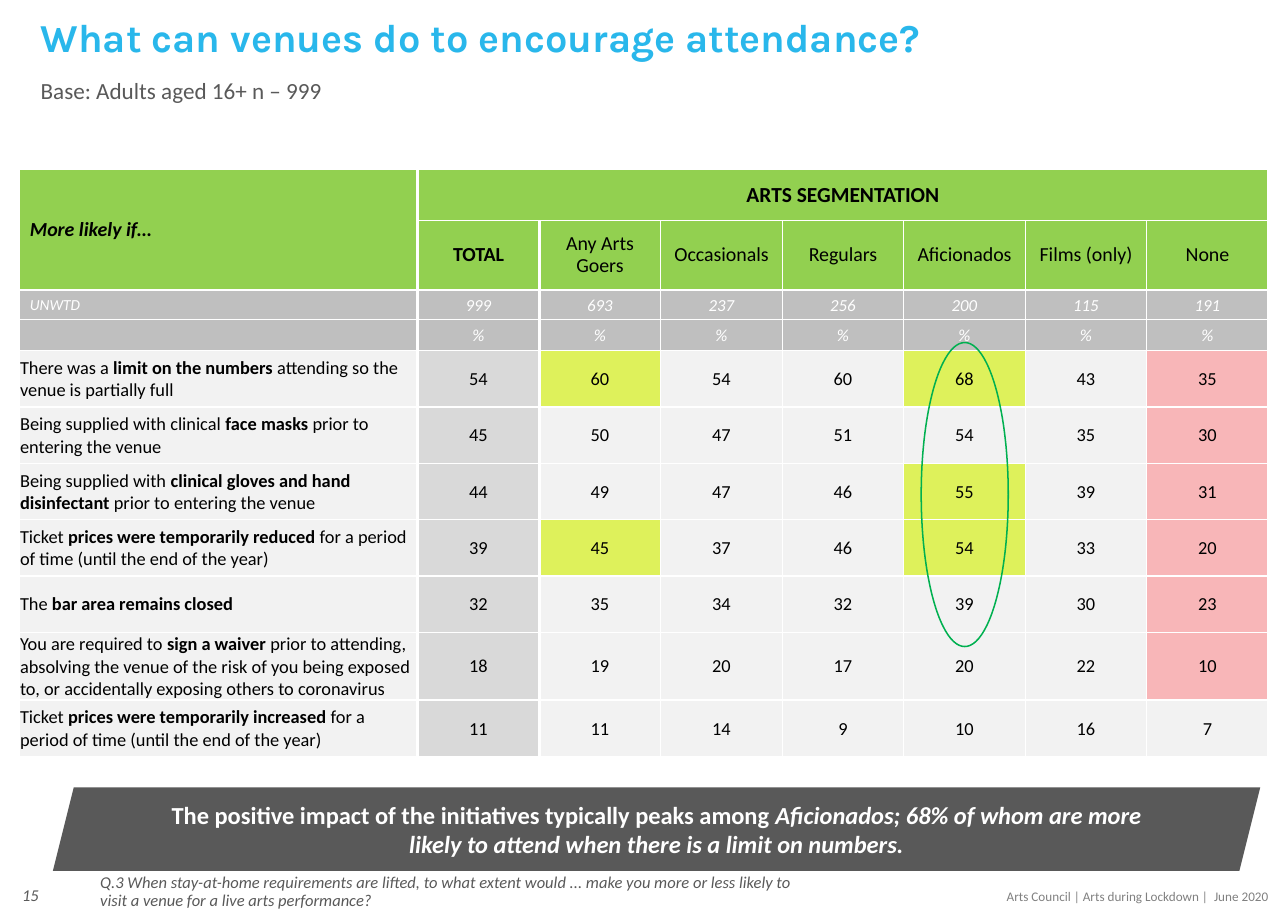
from dataclasses import dataclass

from lxml import etree
from pptx import Presentation
from pptx.dml.color import RGBColor
from pptx.enum.shapes import MSO_SHAPE
from pptx.enum.text import MSO_ANCHOR, MSO_AUTO_SIZE, PP_ALIGN
from pptx.oxml.ns import qn
from pptx.util import Pt

LEFT, CENTER, RIGHT = PP_ALIGN.LEFT, PP_ALIGN.CENTER, PP_ALIGN.RIGHT
TOP, MIDDLE = MSO_ANCHOR.TOP, MSO_ANCHOR.MIDDLE
ELLIPSE, PARALLELOGRAM = MSO_SHAPE.OVAL, MSO_SHAPE.PARALLELOGRAM


@dataclass(frozen=True)
class Theme:
    font: str = "Calibri"
    title_font: str = "Karla"
    title: str = "29B7EB"
    grey: str = "595959"
    footer: str = "808080"
    black: str = "000000"
    white: str = "FFFFFF"
    header: str = "92D050"
    base_row: str = "BFBFBF"
    total: str = "D9D9D9"
    plain: str = "F2F2F2"
    high: str = "DEF15B"
    low: str = "F8B6B8"
    ring: str = "00B050"
    title_size: float = 25.9
    subtitle_size: float = 15.1
    banner_size: float = 16
    span_size: float = 14
    header_size: float = 13
    body_size: float = 12
    base_size: float = 11
    base_label_size: float = 10
    note_size: float = 10.8
    footer_size: float = 8.6


THEME = Theme()

SEGMENTS = ["TOTAL", "Any Arts Goers", "Occasionals", "Regulars",
            "Aficionados", "Films (only)", "None"]
BASES = [999, 693, 237, 256, 200, 115, 191]
# Asterisks enclose the emphasised words
INITIATIVES = [
    ("There was a *limit on the numbers* attending so the venue is partially full",
     [54, 60, 54, 60, 68, 43, 35]),
    ("Being supplied with clinical *face masks* prior to entering the venue",
     [45, 50, 47, 51, 54, 35, 30]),
    ("Being supplied with *clinical gloves and hand disinfectant* prior to entering the venue",
     [44, 49, 47, 46, 55, 39, 31]),
    ("Ticket *prices were temporarily reduced* for a period of time (until the end of the year)",
     [39, 45, 37, 46, 54, 33, 20]),
    ("The *bar area remains closed*", [32, 35, 34, 32, 39, 30, 23]),
    ("You are required to *sign a waiver* prior to attending, absolving the venue of the risk "
     "of you being exposed to, or accidentally exposing others to coronavirus",
     [18, 19, 20, 17, 20, 22, 10]),
    ("Ticket *prices were temporarily increased* for a period of time (until the end of the year)",
     [11, 11, 14, 9, 10, 16, 7]),
]
HIGHS = {(0, 1), (0, 4), (2, 4), (3, 1), (3, 4)}  # (initiative, segment)
ROW_HEIGHTS = [33.3, 45.2, 19.6, 20.2] + [36.8] * 5 + [44.4, 36.8]
LABEL_WIDTH, SEGMENT_WIDTH = 260.6, 79.4
WIDE_INSETS, TIGHT_INSETS = (7.2, 3.6, 7.2, 3.6), (0.72, 0.72, 0.72, 0)


def write(frame, text, size=THEME.body_size, color=THEME.black, font=THEME.font,
          bold=False, italic=False, emphasis="bold", align=LEFT, spacing=1.0):
    paragraph = frame.paragraphs[0]
    paragraph.alignment = align
    paragraph.line_spacing = spacing
    paragraph.space_before = Pt(0)
    if not text:
        paragraph._p.get_or_add_endParaRPr().set("sz", str(int(size * 100)))
        return
    for index, part in enumerate(text.split("*")):
        if not part:
            continue
        run = paragraph.add_run()
        run.text = part
        run.font.name, run.font.size = font, Pt(size)
        run.font.color.rgb = RGBColor.from_string(color)
        run.font.bold, run.font.italic = bold, italic
        if index % 2:
            setattr(run.font, emphasis, True)


def place(shape, left, top, width, height):
    shape.left, shape.top = Pt(left), Pt(top)
    shape.width, shape.height = Pt(width), Pt(height)


def fill_placeholder(shape, box, text, anchor=TOP, **style):
    place(shape, *box)
    frame = shape.text_frame
    frame.word_wrap, frame.auto_size = True, MSO_AUTO_SIZE.NONE
    frame.vertical_anchor = anchor
    properties = frame.paragraphs[0]._p.get_or_add_pPr()
    properties.set("marL", "0")
    properties.set("indent", "0")
    etree.SubElement(properties, qn("a:buNone"))
    write(frame, text, spacing=0.9, **style)


def add_label(slide, box, text, anchor=TOP, **style):
    frame = slide.shapes.add_textbox(*map(Pt, box)).text_frame
    frame.word_wrap, frame.vertical_anchor = True, anchor
    write(frame, text, **style)


def add_figure(slide, kind, box, fill=None, line=None):
    shape = slide.shapes.add_shape(kind, *map(Pt, box))
    shape.shadow.inherit = False
    if fill:
        shape.fill.solid()
        shape.fill.fore_color.rgb = RGBColor.from_string(fill)
    else:
        shape.fill.background()
    if line:
        shape.line.color.rgb = RGBColor.from_string(line)
        shape.line.width = Pt(1)
    else:
        shape.line.fill.background()
    return shape


def set_borders(cell, column):
    """White rules, heavier around the total column and at the right edge."""
    widths = {"L": 2.25 if column in (1, 2) else 1,
              "R": 2.25 if column in (0, 1, len(SEGMENTS)) else 1, "T": 1, "B": 1}
    properties = cell._tc.get_or_add_tcPr()
    for index, (side, width) in enumerate(widths.items()):
        line = etree.Element(qn(f"a:ln{side}"), w=str(Pt(width)))
        solid = etree.SubElement(line, qn("a:solidFill"))
        etree.SubElement(solid, qn("a:srgbClr"), val=THEME.white)
        properties.insert(index, line)


def fill_cell(table, row, column, text, fill, insets=TIGHT_INSETS, **style):
    cell = table.cell(row, column)
    cell.fill.solid()
    cell.fill.fore_color.rgb = RGBColor.from_string(fill)
    cell.vertical_anchor = MIDDLE
    cell.margin_left, cell.margin_top, cell.margin_right, cell.margin_bottom = map(Pt, insets)
    set_borders(cell, column)
    write(cell.text_frame, text, **style)


def value_fill(initiative, segment):
    if segment == 0:
        return THEME.total
    if (initiative, segment) in HIGHS:
        return THEME.high
    is_none = segment == len(SEGMENTS) - 1
    return THEME.low if is_none and initiative < len(INITIATIVES) - 1 else THEME.plain


def add_attendance_table(slide):
    table = slide.shapes.add_table(
        len(ROW_HEIGHTS), len(SEGMENTS) + 1, Pt(12.4), Pt(111),
        Pt(LABEL_WIDTH + SEGMENT_WIDTH * len(SEGMENTS)), Pt(sum(ROW_HEIGHTS))).table
    table.first_row = table.horz_banding = False
    for index, column in enumerate(table.columns):
        column.width = Pt(SEGMENT_WIDTH if index else LABEL_WIDTH)
    for row, height in zip(table.rows, ROW_HEIGHTS):
        row.height = Pt(height)

    # Header and base rows
    table.cell(0, 0).merge(table.cell(1, 0))
    table.cell(0, 1).merge(table.cell(0, len(SEGMENTS)))
    header = dict(fill=THEME.header, insets=WIDE_INSETS, spacing=0.9)
    base = dict(fill=THEME.base_row, color=THEME.white, italic=True)
    fill_cell(table, 0, 0, "More likely if…", size=THEME.header_size,
              bold=True, italic=True, **header)
    fill_cell(table, 0, 1, "ARTS SEGMENTATION", size=THEME.span_size,
              bold=True, align=CENTER, **header)
    fill_cell(table, 2, 0, "UNWTD", size=THEME.base_label_size, insets=WIDE_INSETS, **base)
    fill_cell(table, 3, 0, "", size=THEME.base_size, **base)
    for column, (segment, count) in enumerate(zip(SEGMENTS, BASES), 1):
        fill_cell(table, 1, column, segment, size=THEME.header_size,
                  bold=column == 1, align=CENTER, **header)
        for row, text in ((2, str(count)), (3, "%")):
            fill_cell(table, row, column, text, size=THEME.base_size, align=CENTER, **base)

    # Initiatives
    for initiative, (label, shares) in enumerate(INITIATIVES):
        row = initiative + 4
        fill_cell(table, row, 0, label, THEME.plain)
        for segment, share in enumerate(shares):
            fill_cell(table, row, segment + 1, str(share),
                      value_fill(initiative, segment), align=CENTER)


def main():
    deck = Presentation()
    deck.slide_width, deck.slide_height = Pt(841.68), Pt(595.44)
    slide = deck.slides.add_slide(deck.slide_layouts[3])
    title, base_note, question = slide.placeholders

    # Heading, question and footer
    fill_placeholder(title, (19.4, 10, 675.4, 32.4),
                     "What can venues do to encourage attendance?", anchor=MIDDLE,
                     size=THEME.title_size, color=THEME.title, font=THEME.title_font, bold=True)
    fill_placeholder(base_note, (19.4, 48.2, 471.6, 28), "Base: Adults aged 16+ n – 999",
                     size=THEME.subtitle_size, color=THEME.grey)
    fill_placeholder(question, (58.3, 568, 473.8, 24.5),
                     "Q.3 When stay-at-home requirements are lifted, to what extent would ... make "
                     "you more or less likely to visit a venue for a live arts performance?",
                     size=THEME.note_size, color=THEME.grey, italic=True)
    add_label(slide, (555, 577.4, 281.6, 18), "Arts Council | Arts during Lockdown |  June 2020",
              size=THEME.footer_size, color=THEME.footer, align=RIGHT)
    add_label(slide, (0, 568.8, 32.4, 31.6), "15", anchor=MIDDLE,
              size=THEME.note_size, color=THEME.grey, italic=True, align=RIGHT)

    # Results, ring around the Aficionados, conclusion
    add_attendance_table(slide)
    add_figure(slide, ELLIPSE, (602, 223.9, 56.9, 198.7), line=THEME.ring)
    banner = add_figure(slide, PARALLELOGRAM, (34.6, 514.6, 789, 54.6), fill=THEME.grey).text_frame
    banner.word_wrap, banner.vertical_anchor = True, MIDDLE
    banner.margin_left = banner.margin_top = banner.margin_right = banner.margin_bottom = 0
    write(banner, "The positive impact of the initiatives typically peaks among *Aficionados; 68% of "
          "whom are more likely to attend when there is a limit on numbers.*", emphasis="italic",
          size=THEME.banner_size, color=THEME.white, bold=True, align=CENTER)
    deck.save("out.pptx")


if __name__ == "__main__":
    main()
